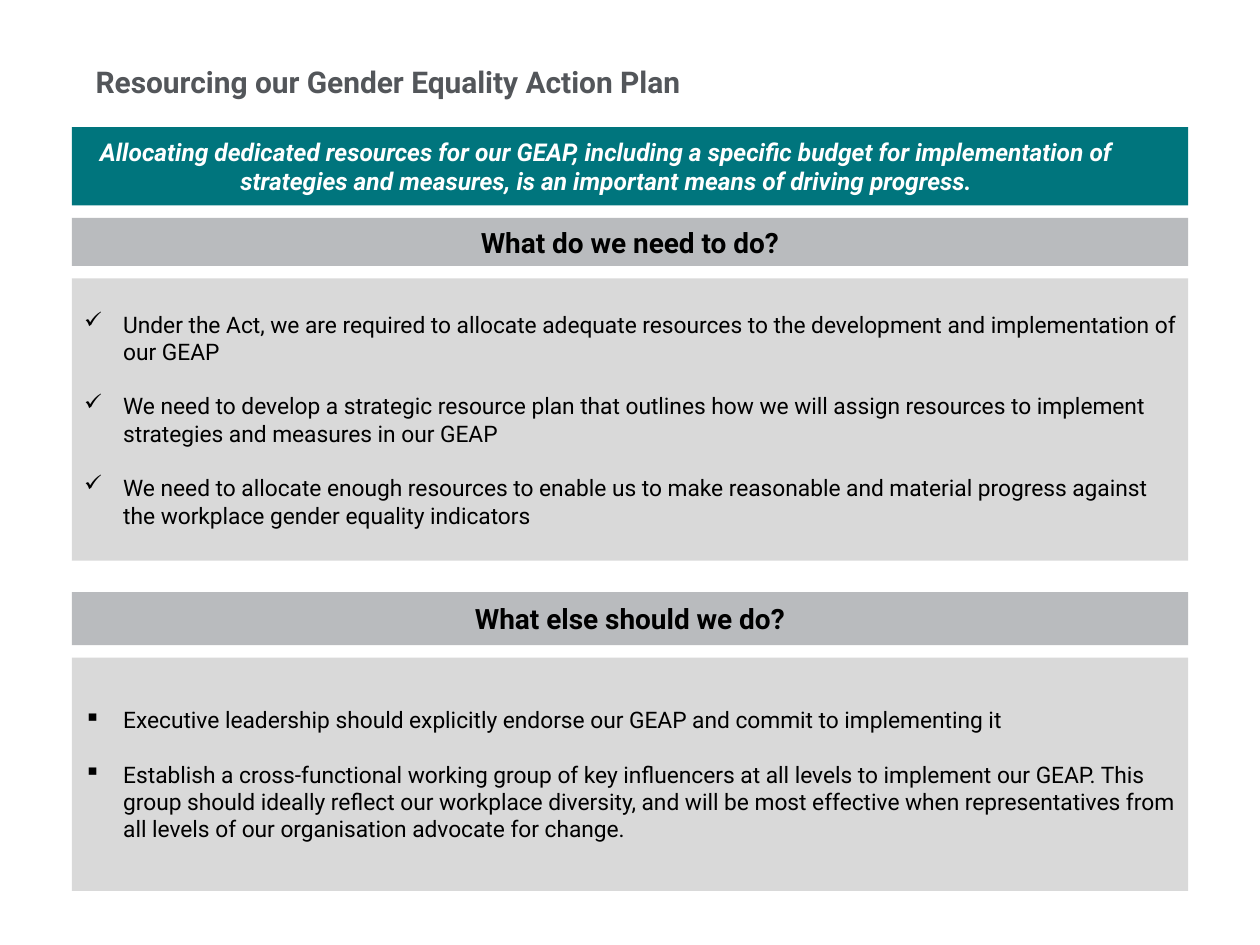
import pptx
import pptx.util
from lxml import etree
from pptx.dml.color import RGBColor
from pptx.enum.shapes import MSO_SHAPE
from pptx.enum.text import MSO_ANCHOR, PP_ALIGN
from pptx.oxml.ns import qn

COLORS = {"title": "53565A", "teal": "00757D", "bar": "B9BBBE",
          "panel": "D9D9D9", "black": "000000", "white": "FFFFFF"}
FONT = "Roboto"
TITLE = "Resourcing our Gender Equality Action Plan"
MESSAGE = ("Allocating dedicated resources for our GEAP, including a specific budget for "
           "implementation of strategies and measures, is an important means of driving progress.")
# heading, bullet, items, heading top, heading height, panel height (inches)
SECTIONS = [
    ("What do we need to do?", "✓", [
        "Under the Act, we are required to allocate adequate resources to the development "
        "and implementation of our GEAP",
        "We need to develop a strategic resource plan that outlines how we will assign "
        "resources to implement strategies and measures in our GEAP",
        "We need to allocate enough resources to enable us to make reasonable and material "
        "progress against the workplace gender equality indicators",
    ], 1.73, 0.38, 2.24),
    ("What else should we do?", "▪", [
        "Executive leadership should explicitly endorse our GEAP and commit to implementing it",
        "Establish a cross-functional working group of key influencers at all levels to "
        "implement our GEAP. This group should ideally reflect our workplace diversity, and "
        "will be most effective when representatives from all levels of our organisation "
        "advocate for change.",
    ], 4.7, 0.42, 1.85),
]
WIDTH, HEIGHT = 10, 7.5
MARGIN, GAP = 0.57, 0.1
INDENT = 0.31
ITEM_GAP = 15.5  # points, one line of body text

Inches, Pt = pptx.util.Inches, pptx.util.Pt


def fill_text(tf, texts, size, color, align=PP_ALIGN.LEFT, bold=False, italic=False,
              anchor=MSO_ANCHOR.MIDDLE, insets=(0.1, 0.05, 0.1, 0.05)):
    tf.word_wrap = True
    tf.vertical_anchor = anchor
    tf.margin_left, tf.margin_top, tf.margin_right, tf.margin_bottom = map(Inches, insets)
    for i, text in enumerate(texts):
        p = tf.add_paragraph() if i else tf.paragraphs[0]
        p.text, p.alignment = text, align
        if i:
            p.space_before = Pt(ITEM_GAP)
        p.font.name, p.font.size = FONT, Pt(size)
        p.font.bold, p.font.italic = bold, italic
        p.font.color.rgb = RGBColor.from_string(COLORS[color])


def add_band(s, top, height, fill):
    """Add a borderless rectangle across the content width."""
    sp = s.shapes.add_shape(MSO_SHAPE.RECTANGLE, Inches(MARGIN), Inches(top),
                            Inches(WIDTH - 2 * MARGIN), Inches(height))
    sp.shadow.inherit = False
    sp.fill.solid()
    sp.fill.fore_color.rgb = RGBColor.from_string(COLORS[fill])
    sp.line.fill.background()
    return sp.text_frame


def add_bullets(tf, char):
    for p in tf.paragraphs:
        pPr = p._p.get_or_add_pPr()
        pPr.set("marL", str(Inches(INDENT)))
        pPr.set("indent", str(-Inches(INDENT)))
        bullet = etree.Element(qn("a:buChar"), char=char)
        pPr.find(qn("a:defRPr")).addprevious(bullet)


def main():
    prs = pptx.Presentation()
    prs.slide_width, prs.slide_height = Inches(WIDTH), Inches(HEIGHT)
    s = prs.slides.add_slide(prs.slide_layouts[6])

    title = s.shapes.add_textbox(Inches(0.76), 0, Inches(6.73), Inches(0.79))
    fill_text(title.text_frame, [TITLE], 17.1, "title", bold=True,
              anchor=MSO_ANCHOR.BOTTOM, insets=(0, 0, 0, 0))

    fill_text(add_band(s, 1.01, 0.62, "teal"), [MESSAGE], 14, "white", PP_ALIGN.CENTER,
              bold=True, italic=True, insets=(0.02, 0.05, 0.39, 0.05))

    for heading, bullet, items, top, bar_height, panel_height in SECTIONS:
        fill_text(add_band(s, top, bar_height, "bar"), [heading], 16, "black",
                  PP_ALIGN.CENTER, bold=True)
        panel = add_band(s, top + bar_height + GAP, panel_height, "panel")
        fill_text(panel, items, 13, "black")
        add_bullets(panel, bullet)

    prs.save("out.pptx")


if __name__ == "__main__":
    main()
